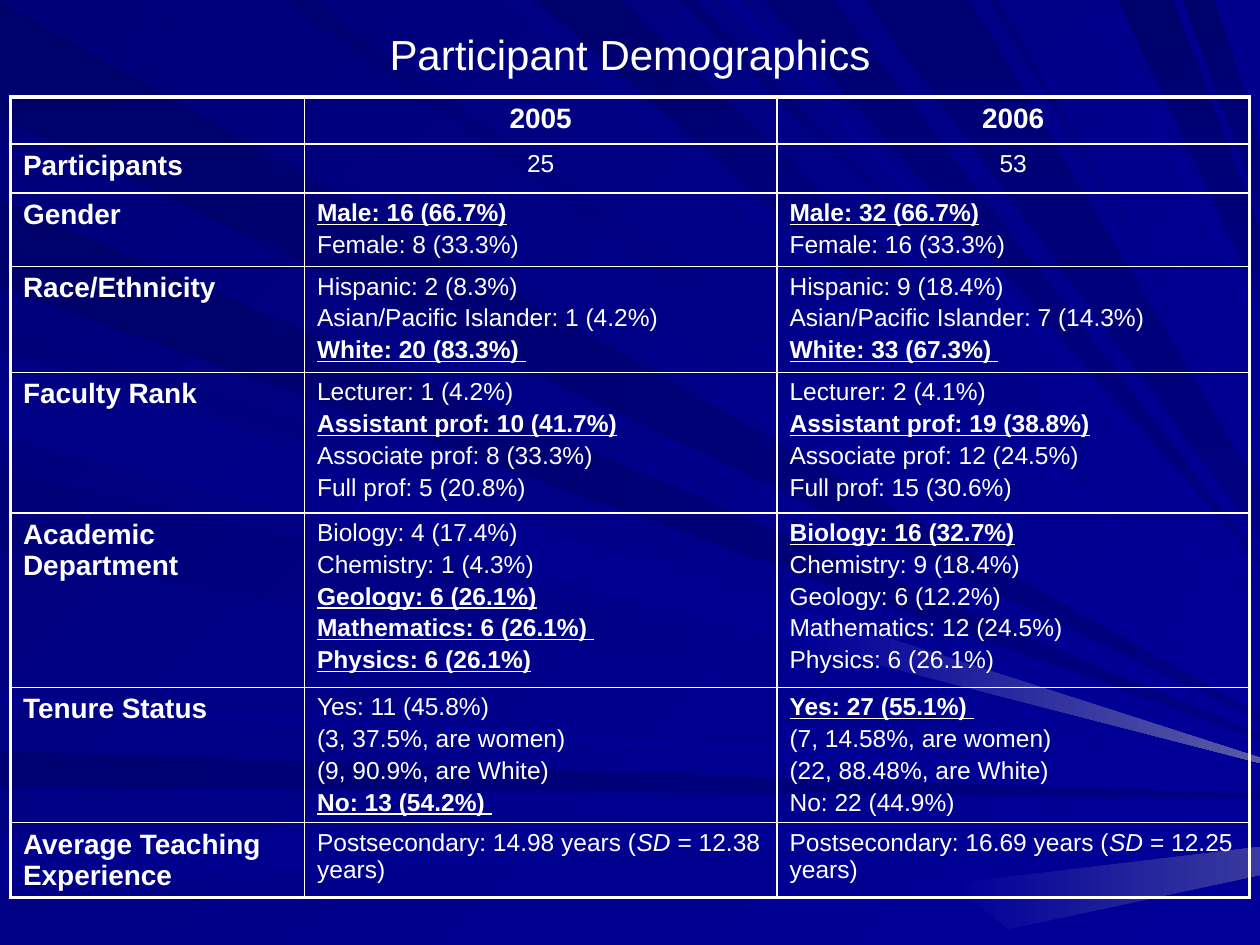
"""Build the Participant Demographics slide with its table over a field of rays."""
from dataclasses import dataclass
from typing import NamedTuple

import pptx
import pptx.dml.color
import pptx.enum.text
import pptx.oxml.ns
import pptx.util
from lxml import etree

Pt = pptx.util.Pt
RGBColor = pptx.dml.color.RGBColor
CENTER = pptx.enum.text.PP_ALIGN.CENTER
qn = pptx.oxml.ns.qn

WHITE = RGBColor.from_string("FFFFFF")
BLACKEST = RGBColor.from_string("00006B")
DARKEST = RGBColor.from_string("000073")
DARK = RGBColor.from_string("000078")
NAVY = RGBColor.from_string("000080")
MEDIUM = RGBColor.from_string("000085")
BRIGHT = RGBColor.from_string("00008C")
BLUE = RGBColor.from_string("000099")
GLOW = RGBColor.from_string("5A5AA6")
FAINT_GLOW = RGBColor.from_string("39399E")

WIDTH, HEIGHT = 720, 540
THIN, THICK = 1, 2.25
LABEL_SIZE, BODY_SIZE, TITLE_SIZE = 16, 14, 24
COLUMN_WIDTHS = (168, 270, 270)


class Ray(NamedTuple):
    """A beam from a stretch of the top or left edge to a height on the right edge."""
    edge: str
    near: float
    far: float
    tip: float
    start: RGBColor
    end: RGBColor = BLUE
    spread: float = 1


class Shard(NamedTuple):
    """A lit piece on the right, outlined in points."""
    points: tuple
    start: RGBColor
    end: RGBColor


@dataclass
class Run:
    """A piece of text with one style."""
    text: str
    bold: bool = False
    underline: bool = False
    italic: bool = False


@dataclass
class Row:
    """A table row: its height, its label and the paragraphs for each year."""
    height: float
    label: str
    years: tuple
    centred: bool = False
    size: int = BODY_SIZE


RAYS = [
    Ray("left", 1, 67, 410, BLACKEST, NAVY),
    Ray("top", 19, 73, 405, DARK),
    Ray("left", 429, 449, 455, DARKEST, NAVY),
    Ray("left", 479, 507, 466, BRIGHT, spread=3),
    Ray("left", 529, 540, 477, MEDIUM),
    Ray("left", 186, 194, 424, DARK),
    Ray("left", 115, 164, 421, BLACKEST, NAVY),
    Ray("top", 287, 300, 373, MEDIUM, spread=2),
    Ray("top", 307, 354, 355, BLACKEST, spread=10),
    Ray("top", 389, 397, 333, DARKEST),
    Ray("top", 436, 476, 321, DARKEST, NAVY),
    Ray("top", 639, 670, 151, BLACKEST, NAVY, 20),
    Ray("top", 676, 694, 101, BLACKEST, NAVY, 19),
    Ray("left", 200, 246, 431, NAVY, spread=2),
    Ray("left", 269, 315, 436, DARK),
    Ray("left", 397, 403, 448, BRIGHT),
    Ray("top", 162, 178, 396, DARKEST, spread=2),
    Ray("top", 415, 423, 327, BRIGHT),
    Ray("top", 494, 554, 294, DARKEST, NAVY, 14),
    Ray("top", 565, 570, 257, DARK, spread=2),
    Ray("top", 587, 593, 242, MEDIUM),
    Ray("top", 623, 628, 183, BRIGHT, spread=3),
    Ray("left", 204, 250, 434, MEDIUM),
]
SHARDS = [
    Shard(((WIDTH, 500), (WIDTH, 484), (544, 505), (576, 531)), BLUE, FAINT_GLOW),
    Shard(((WIDTH, 433), (459, 349), (456, 368), (WIDTH, 436)), BLUE, GLOW),
]


def plain(*texts: str) -> list:
    return [[Run(text)] for text in texts]


def top(text: str, tail: str = "") -> list:
    runs = [Run(text, bold=True, underline=True)]
    return [runs + [Run(tail, underline=True)] if tail else runs]


def teaching(years: str, deviation: str) -> list:
    return [[Run(f"Postsecondary: {years} years ("), Run("SD", italic=True), Run(f" = {deviation} years)")]]


ROWS = [
    Row(23, "", ([[Run("2005", bold=True)]], [[Run("2006", bold=True)]]), True, LABEL_SIZE),
    Row(28, "Participants", (plain("25"), plain("53")), True),
    Row(42, "Gender", (top("Male: 16 (66.7%)") + plain("Female: 8 (33.3%)"),
                       top("Male: 32 (66.7%)") + plain("Female: 16 (33.3%)"))),
    Row(60.5, "Race/Ethnicity", (
        plain("Hispanic: 2 (8.3%)", "Asian/Pacific Islander: 1 (4.2%)") + top("White: 20 (83.3%)", " "),
        plain("Hispanic: 9 (18.4%)", "Asian/Pacific Islander: 7 (14.3%)") + top("White: 33 (67.3%)", " "))),
    Row(80.5, "Faculty Rank", (
        plain("Lecturer: 1 (4.2%)") + top("Assistant prof: 10 (41.7%)")
        + plain("Associate prof: 8 (33.3%)", "Full prof: 5 (20.8%)"),
        plain("Lecturer: 2 (4.1%)") + top("Assistant prof: 19 (38.8%)")
        + plain("Associate prof: 12 (24.5%)", "Full prof: 15 (30.6%)"))),
    Row(99.5, "Academic Department", (
        plain("Biology: 4 (17.4%)", "Chemistry: 1 (4.3%)") + top("Geology: 6 (26.1%)")
        + top("Mathematics: 6 (26.1%)", " ") + top("Physics: 6 (26.1%)"),
        top("Biology: 16 (32.7%)") + plain("Chemistry: 9 (18.4%)", "Geology: 6 (12.2%)",
                                           "Mathematics: 12 (24.5%)", "Physics: 6 (26.1%)"))),
    Row(57.5, "Tenure Status", (
        plain("Yes: 11 (45.8%)", "(3, 37.5%, are women)", "(9, 90.9%, are White)") + top("No: 13 (54.2%)", " "),
        top("Yes: 27 (55.1%)", " ") + plain("(7, 14.58%, are women)", "(22, 88.48%, are White)", "No: 22 (44.9%)"))),
    Row(40.5, "Average Teaching Experience", (teaching("14.98", "12.38"), teaching("16.69", "12.25"))),
]


def set_gradient(fill, start: RGBColor, end: RGBColor, angle: int) -> None:
    fill.gradient()
    fill.gradient_angle = -angle % 360
    for stop, colour in zip(fill.gradient_stops, (start, end)):
        stop.color.rgb = colour


def draw_outline(s, points: tuple, start: RGBColor, end: RGBColor, angle: int = 0) -> None:
    first, *rest = [(Pt(x), Pt(y)) for x, y in points]
    builder = s.shapes.build_freeform(*first)
    builder.add_line_segments(rest, close=True)
    sp = builder.convert_to_shape()
    sp.shadow.inherit = False
    sp.line.fill.background()
    set_gradient(sp.fill, start, end, angle)


def draw_ray(s, ray: Ray) -> None:
    on_top = ray.edge == "top"
    near, far = [(v, 0) if on_top else (0, v) for v in (ray.near, ray.far)]
    upper, lower = (WIDTH, ray.tip - ray.spread), (WIDTH, ray.tip + ray.spread)
    tips = (upper, lower) if on_top else (lower, upper)
    angle = 45 if ray.end == BLUE else 90 if on_top else 0
    draw_outline(s, (near, far, *tips), ray.start, ray.end, angle)


def write(tf, paragraphs: list, size: int, centred: bool = False) -> None:
    for i, runs in enumerate(paragraphs):
        p = tf.add_paragraph() if i else tf.paragraphs[0]
        if i:
            p.space_before = Pt(2.4)
        if centred:
            p.alignment = CENTER
        for run in runs:
            r = p.add_run()
            r.text = run.text
            r.font.color.rgb = WHITE
            values = {"name": "Arial", "size": Pt(size), "bold": run.bold,
                      "underline": run.underline, "italic": run.italic}
            for key, value in values.items():
                setattr(r.font, key, value)
        if not runs:
            etree.SubElement(p._p, qn("a:endParaRPr"), sz=str(size * 100))


def set_borders(cell, widths: dict) -> None:
    tc_pr = cell._tc.get_or_add_tcPr()
    for i, (side, width) in enumerate(widths.items()):
        ln = etree.Element(qn(f"a:{side}"), w=str(Pt(width)))
        fill = etree.SubElement(ln, qn("a:solidFill"))
        etree.SubElement(fill, qn("a:srgbClr"), val=str(WHITE))
        tc_pr.insert(i, ln)


def draw_table(s, rows: list) -> None:
    height = sum(row.height for row in rows)
    table = s.shapes.add_table(len(rows), len(COLUMN_WIDTHS), Pt(6), Pt(55.5),
                               Pt(sum(COLUMN_WIDTHS)), Pt(height)).table
    table.first_row = table.horz_banding = False
    for column, width in zip(table.columns, COLUMN_WIDTHS):
        column.width = Pt(width)
    for i, row in enumerate(rows):
        table.rows[i].height = Pt(row.height)
        label = [[Run(row.label, bold=True)] if row.label else []]
        for j, paragraphs in enumerate((label, *row.years)):
            cell = table.cell(i, j)
            cell.fill.background()
            write(cell.text_frame, paragraphs, row.size if j else LABEL_SIZE, row.centred and j > 0)
            outer = {"lnL": j == 0, "lnR": j == len(COLUMN_WIDTHS) - 1, "lnT": i == 0, "lnB": i == len(rows) - 1}
            set_borders(cell, {side: THICK if edge else THIN for side, edge in outer.items()})


def main() -> None:
    prs = pptx.Presentation()
    prs.slide_width, prs.slide_height = Pt(WIDTH), Pt(HEIGHT)
    s = prs.slides.add_slide(prs.slide_layouts[6])
    set_gradient(s.background.fill, DARK, BLUE, 45)
    for ray in RAYS:
        draw_ray(s, ray)
    for shard in SHARDS:
        draw_outline(s, *shard)
    draw_table(s, ROWS)
    tf = s.shapes.add_textbox(Pt(0), Pt(12.5), Pt(WIDTH), Pt(36)).text_frame
    tf.word_wrap = True
    tf.auto_size = pptx.enum.text.MSO_AUTO_SIZE.SHAPE_TO_FIT_TEXT
    write(tf, plain("Participant Demographics"), TITLE_SIZE, True)
    prs.save("out.pptx")


if __name__ == "__main__":
    main()
